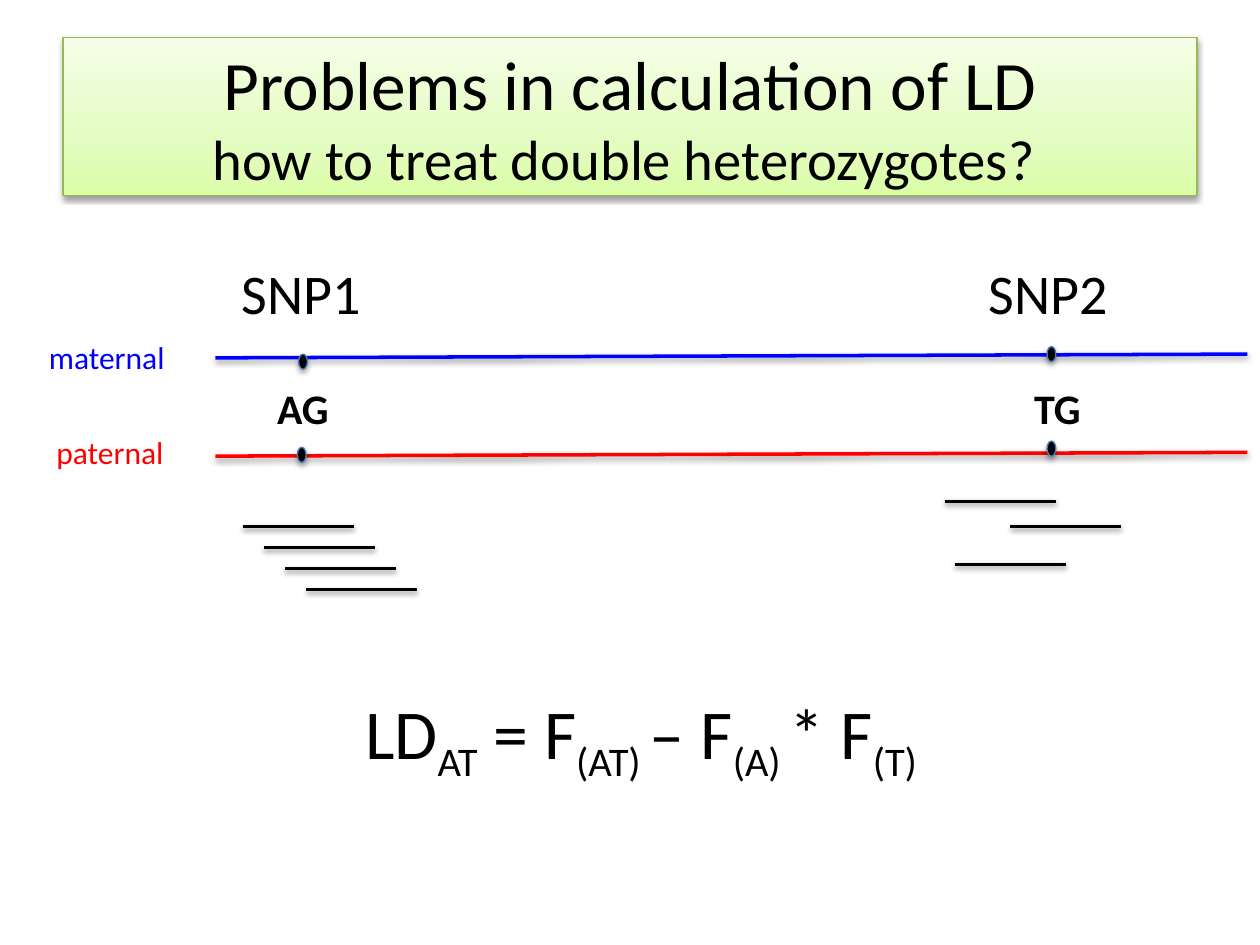
"""Build a slide on double heterozygotes in the calculation of LD."""
from copy import deepcopy

from lxml.etree import fromstring
from pptx import Presentation
from pptx.dml.color import RGBColor
from pptx.enum.shapes import MSO_CONNECTOR, MSO_SHAPE
from pptx.enum.text import MSO_ANCHOR, MSO_AUTO_SIZE, PP_ALIGN
from pptx.oxml.ns import qn
from pptx.util import Inches, Pt

COLORS = {
    "text": "000000", "maternal": "0000FF", "paternal": "FF0000",
    "title_bottom": "DAFDA7", "title_middle": "E4FCC2", "title_top": "F5FFE7",
    "title_edge": "98B955", "allele_edge": "4B7EBC",
}
RGB = {part: RGBColor.from_string(value) for part, value in COLORS.items()}
TITLE_SHADOW = """
<a:effectLst xmlns:a="http://schemas.openxmlformats.org/drawingml/2006/main">
  <a:outerShdw blurRad="40000" dist="20000" dir="5400000" rotWithShape="0">
    <a:srgbClr val="000000"><a:alpha val="38000"/></a:srgbClr>
  </a:outerShdw>
</a:effectLst>"""

deck = Presentation()
deck.slide_width, deck.slide_height = Inches(10), Inches(7.5)
COL, ROW = deck.slide_width / 100, deck.slide_height / 100
slide = deck.slides.add_slide(deck.slide_layouts[5])


def add_run(paragraph, words, size, color="text", bold=False, baseline=0):
    run = paragraph.add_run()
    run.text = words
    run.font.name = "Calibri"
    run.font.size = Pt(size)
    run.font.bold = bold
    run.font.color.rgb = RGB[color]
    if baseline:
        run._r.get_or_add_rPr().set("baseline", str(baseline * 1000))


def add_strand(start, end, color):
    strand = slide.shapes.add_connector(
        MSO_CONNECTOR.STRAIGHT,
        int(start[0] * COL), int(start[1] * ROW),
        int(end[0] * COL), int(end[1] * ROW))
    strand.line.color.rgb = RGB[color]
    strand.line.width = Pt(2)


title = slide.shapes.title
title.left, title.top = int(5 * COL), int(4 * ROW)
title.width, title.height = int(90 * COL), int(16.67 * ROW)
title.fill.gradient()
title.fill.gradient_angle = 90
bottom, top = title.fill.gradient_stops
bottom.position, top.position = 0, 1
bottom.color.rgb, top.color.rgb = RGB["title_bottom"], RGB["title_top"]
stops = title._element.spPr.find(".//" + qn("a:gsLst"))
stops.insert(1, deepcopy(stops[0]))
middle = title.fill.gradient_stops[1]
middle.position, middle.color.rgb = 0.35, RGB["title_middle"]
title.line.color.rgb = RGB["title_edge"]
title.line.width = Pt(0.75)
title._element.spPr.append(fromstring(TITLE_SHADOW))

title.text_frame.auto_size = MSO_AUTO_SIZE.NONE
title.text_frame.vertical_anchor = MSO_ANCHOR.MIDDLE
heading = title.text_frame.paragraphs[0]
heading.alignment = PP_ALIGN.CENTER
add_run(heading, "Problems in calculation of LD", 39.6)
heading.add_line_break()
add_run(heading, "how to treat double heterozygotes? ", 32.4)

for parent, height in (("maternal", 37.87), ("paternal", 48.27)):
    add_strand((17.1, height), (99, height - 0.4), parent)

READ_LENGTH = 8.8
snp1_reads = [(19.3 + 1.67 * i, 55.73 + 2.22 * i) for i in range(4)]
snp2_reads = [(75, 53.07), (75.8, 59.73), (80.2, 55.73)]
for x, y in snp1_reads + snp2_reads:
    add_strand((x, y), (x + READ_LENGTH, y), "text")

for x, y in ((23.7, 37.47), (23.6, 47.33), (83.1, 36.67), (83.1, 46.67)):
    allele = slide.shapes.add_shape(
        MSO_SHAPE.OVAL, int(x * COL), int(y * ROW), int(0.7 * COL), int(1.6 * ROW))
    allele.fill.solid()
    allele.fill.fore_color.rgb = RGB["text"]
    allele.line.color.rgb = RGB["allele_edge"]
    allele.line.width = Pt(0.75)

formula = [("LD", 0), ("AT", -25), (" = F", 0), ("(AT) ", -25),
           ("– F", 0), ("(A) ", -25), ("* F", 0), ("(T)", -25)]
labels = [
    (2.9, 35.07, 11.3, 5.33, 18, "maternal", False, [("maternal", 0)]),
    (3.5, 45.2, 10.7, 5.33, 18, "paternal", False, [("paternal", 0)]),
    (21, 39.87, 6.2, 6.67, 24, "text", True, [("AG", 0)]),
    (81.1, 39.87, 5.8, 6.67, 24, "text", True, [("TG", 0)]),
    (18.2, 26.67, 11.6, 8.53, 32, "text", False, [("SNP1", 0)]),
    (77.5, 26.67, 11.6, 8.53, 32, "text", False, [("SNP2", 0)]),
    (28, 72.27, 49.5, 10.27, 40, "text", False, formula),
]
for x, y, width, height, size, color, bold, pieces in labels:
    label = slide.shapes.add_textbox(
        int(x * COL), int(y * ROW), int(width * COL), int(height * ROW)).text_frame
    label.word_wrap = False
    label.auto_size = MSO_AUTO_SIZE.SHAPE_TO_FIT_TEXT
    for words, baseline in pieces:
        add_run(label.paragraphs[0], words, size, color, bold, baseline)

deck.save("out.pptx")
